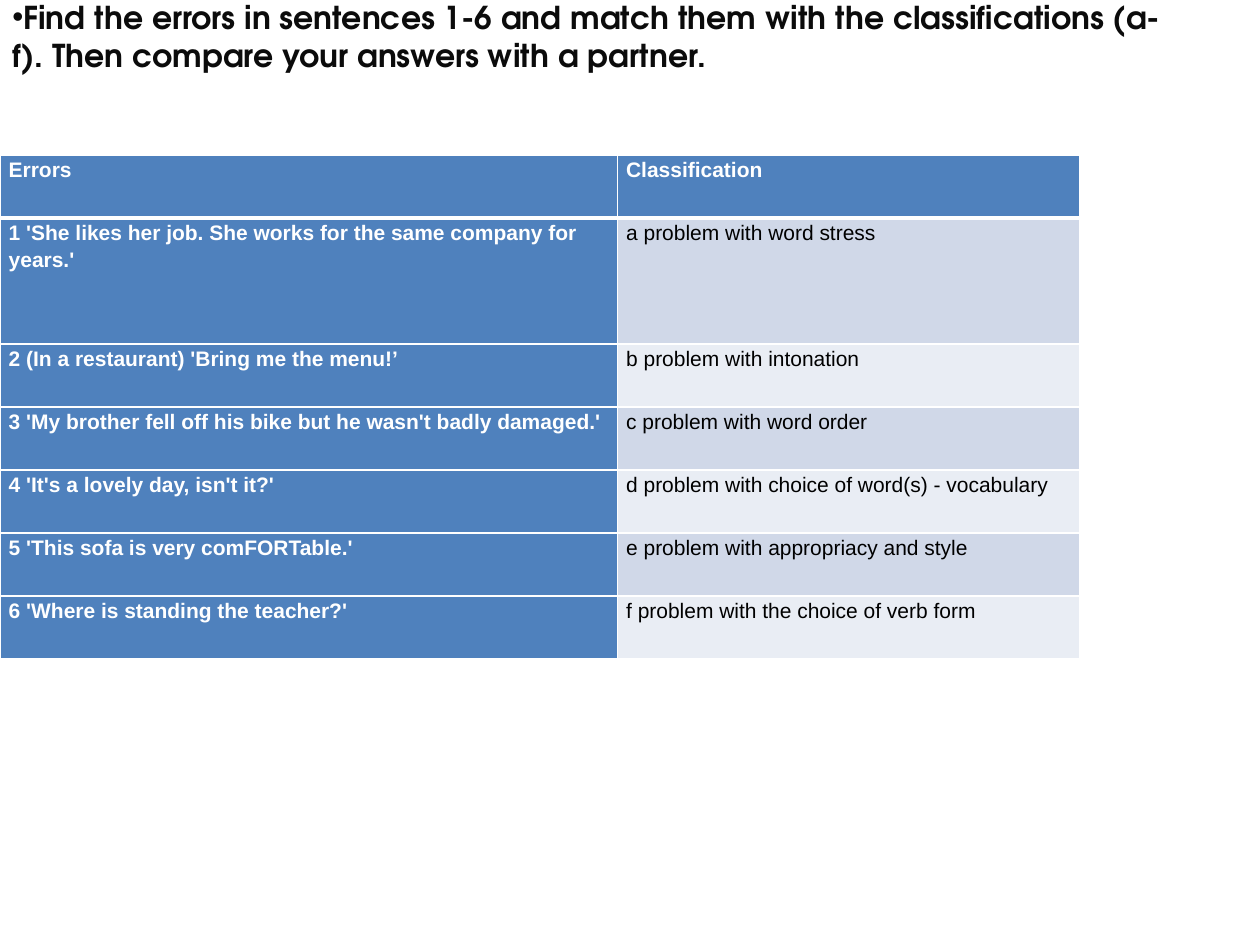
from lxml.etree import SubElement
from pptx import Presentation
from pptx.dml.color import RGBColor
from pptx.enum.text import MSO_ANCHOR
from pptx.oxml.ns import qn
from pptx.util import Pt

COLORS = {
    "ink": "0B0B0B",
    "black": "000000",
    "white": "FFFFFF",
    "blue": "4F81BD",
    "band_dark": "D0D8E8",
    "band_light": "E9EDF4",
}

HEADER = ("Errors", "Classification")
PAIRS = [
    ("1 'She likes her job. She works for the same company for years.'",
     "a problem with word stress"),
    ("2 (In a restaurant) 'Bring me the menu!’", "b problem with intonation"),
    ("3 'My brother fell off his bike but he wasn't badly damaged.'",
     "c problem with word order"),
    ("4 'It's a lovely day, isn't it?'",
     "d problem with choice of word(s) - vocabulary"),
    ("5 'This sofa is very comFORTable.'",
     "e problem with appropriacy and style"),
    ("6 'Where is standing the teacher?'",
     "f problem with the choice of verb form"),
]
TASK = ("Find the errors in sentences 1-6 and match them with the "
        "classifications (a-f). Then compare your answers with a partner.")


def rgb(name):
    return RGBColor.from_string(COLORS[name])


def write(tf, text, *, font, size, color, bold=False, spacing=None, after=None):
    p = tf.paragraphs[0]
    p.line_spacing = spacing
    if after is not None:
        p.space_after = Pt(after)
    r = p.add_run()
    r.text = text
    r.font.name = font
    r.font.size = Pt(size)
    r.font.bold = bold
    r.font.color.rgb = rgb(color)
    return p


def add_bullet(p):
    """Set a bullet directly in front of the text, without an indent."""
    pPr = p._p.get_or_add_pPr()
    pPr.set("marL", "0")
    pPr.set("indent", "0")
    SubElement(pPr, qn("a:buFont"), typeface="Arial")
    SubElement(pPr, qn("a:buChar"), char="•")


def set_borders(cell, color, bottom):
    """Draw 1 pt borders, with a bottom border of its own width."""
    tcPr = cell._tc.get_or_add_tcPr()
    sides = [("a:lnL", 1), ("a:lnR", 1), ("a:lnT", 1), ("a:lnB", bottom)]
    for i, (tag, width) in enumerate(sides):
        ln = tcPr.makeelement(qn(tag), {"w": str(Pt(width))})
        fill = SubElement(ln, qn("a:solidFill"))
        SubElement(fill, qn("a:srgbClr"), val=COLORS[color])
        tcPr.insert(i, ln)


class SlideBuilder:
    """Holds the current slide and its fonts."""

    title_font = "TeX Gyre Adventor"
    table_font = "Arial"

    def __init__(self, slide):
        self.slide = slide

    def instruction(self, text, left, top, width, height):
        sp = self.slide.shapes.add_textbox(Pt(left), Pt(top), Pt(width), Pt(height))
        tf = sp.text_frame
        tf.word_wrap = True
        tf.vertical_anchor = MSO_ANCHOR.MIDDLE
        add_bullet(write(tf, text, font=self.title_font, size=18,
                         color="ink", bold=True))

    def table(self, rows, left, top, widths, heights):
        frame = self.slide.shapes.add_table(
            len(rows), len(widths), Pt(left), Pt(top),
            Pt(sum(widths)), Pt(sum(heights)))
        table = frame.table
        for column, width in zip(table.columns, widths):
            column.width = Pt(width)
        for row, height in zip(table.rows, heights):
            row.height = Pt(height)
        for i, texts in enumerate(rows):
            band = "band_dark" if i % 2 else "band_light"
            for j, text in enumerate(texts):
                self.cell(table.cell(i, j), text, strong=i == 0 or j == 0,
                          band=band, bottom=3 if i == 0 else 1)

    def cell(self, cell, text, strong, band, bottom):
        cell.margin_left = cell.margin_right = Pt(5)
        cell.margin_top = cell.margin_bottom = Pt(0)
        cell.fill.solid()
        cell.fill.fore_color.rgb = rgb("blue" if strong else band)
        set_borders(cell, "white", bottom)
        write(cell.text_frame, text, font=self.table_font, size=12,
              color="white" if strong else "black", bold=strong,
              spacing=1.15, after=10)


def main():
    prs = Presentation()
    prs.slide_width, prs.slide_height = Pt(720), Pt(540)
    builder = SlideBuilder(prs.slides.add_slide(prs.slide_layouts[6]))
    builder.table([HEADER, *PAIRS], 0, 88.5, widths=[352.8, 264.2],
                  heights=[36, 72] + [36] * 5)
    builder.instruction(TASK, 0, -5, 681, 51)
    prs.save("out.pptx")


if __name__ == "__main__":
    main()
